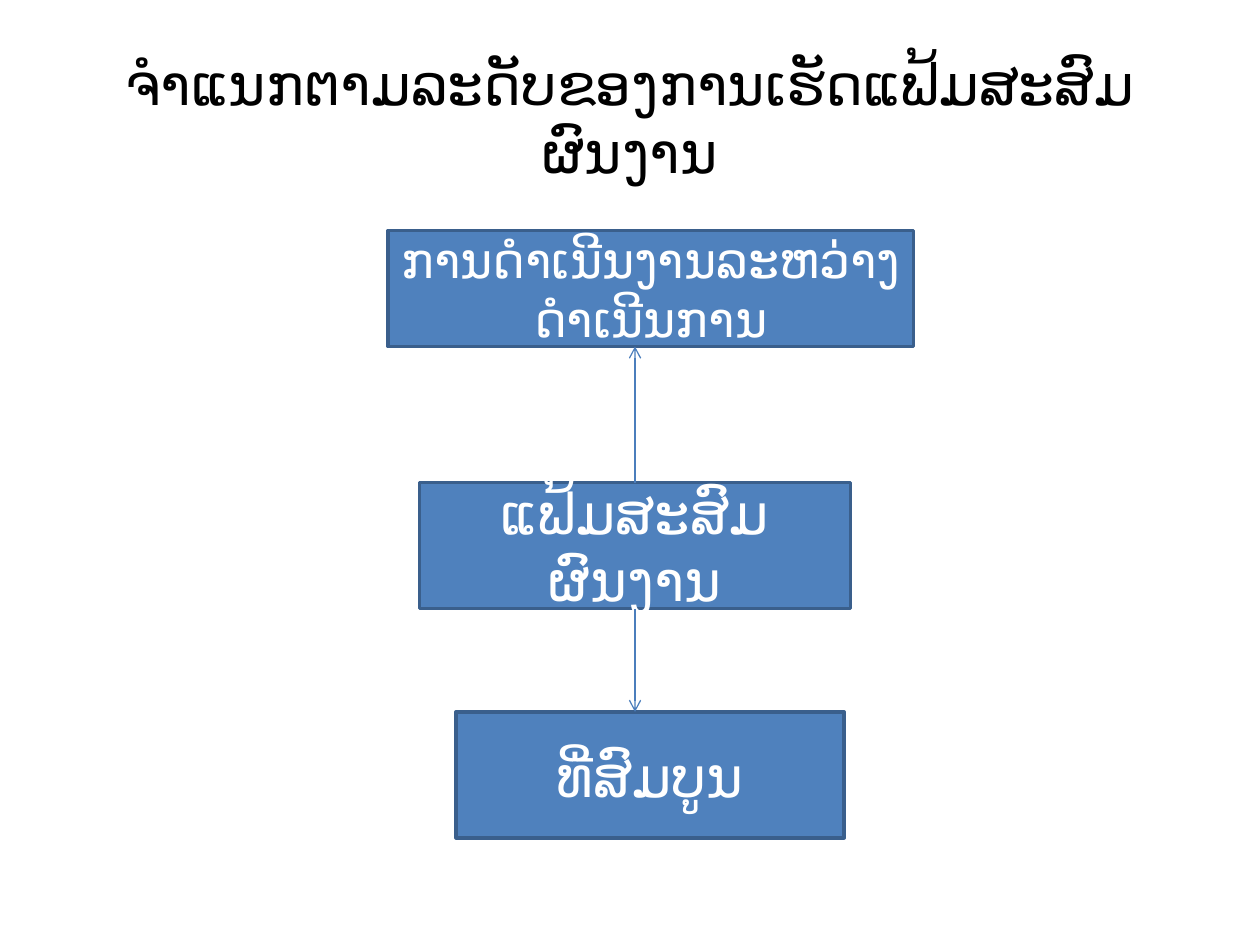
from lxml import etree
from pptx import Presentation
from pptx.dml.color import RGBColor
from pptx.enum.shapes import MSO_CONNECTOR, MSO_SHAPE
from pptx.enum.text import MSO_ANCHOR, MSO_AUTO_SIZE, PP_ALIGN
from pptx.oxml.ns import qn
from pptx.util import Inches, Pt

RECTANGLE = MSO_SHAPE.RECTANGLE
STRAIGHT = MSO_CONNECTOR.STRAIGHT
MIDDLE = MSO_ANCHOR.MIDDLE
CENTER = PP_ALIGN.CENTER
NO_AUTOFIT = MSO_AUTO_SIZE.NONE
TOP, BOTTOM = 0, 2

FONT = "Calibri"
COLORS = {
    "title": "000000",
    "box": "4F81BD",
    "border": "3A5F8C",
    "arrow": "4B7EBC",
    "label": "FFFFFF",
}

TITLE = "ຈຳແນກຕາມລະດັບຂອງການເຮັດແຟ້ມສະສົມຜົນງານ"
BOXES = {
    "portfolio": ("ແຟ້ມສະສົມຜົນງານ", 3.33, 3.83, 3.42, 1, 32),
    "in_progress": ("ການດຳເນີນງານລະຫວ່າງດຳເນີນການ", 3.08, 1.83, 4.17, 0.92, 28),
    "complete": ("ທີ່ສົມບູນ", 3.62, 5.65, 3.08, 1, 32),
}


def color(name):
    return RGBColor.from_string(COLORS[name])


def write_text(shape, text, size, color_name):
    frame = shape.text_frame
    frame.text = text
    frame.word_wrap = True
    frame.auto_size = NO_AUTOFIT
    frame.vertical_anchor = MIDDLE
    paragraph = frame.paragraphs[0]
    paragraph.alignment = CENTER
    font = paragraph.runs[0].font
    font.name = FONT
    font.size = Pt(size)
    font.color.rgb = color(color_name)


def add_box(page, text, left, top, width, height, size):
    box = page.shapes.add_shape(
        RECTANGLE, Inches(left), Inches(top), Inches(width), Inches(height)
    )
    box.shadow.inherit = False
    box.fill.solid()
    box.fill.fore_color.rgb = color("box")
    box.line.color.rgb = color("border")
    box.line.width = Pt(2)
    write_text(box, text, size, "label")
    return box


def add_arrow(page, source, side, end_y):
    center_x = source.left + source.width // 2
    start_y = source.top if side == TOP else source.top + source.height
    arrow = page.shapes.add_connector(STRAIGHT, center_x, start_y, center_x, end_y)
    arrow.begin_connect(source, side)
    arrow.line.color.rgb = color("arrow")
    arrow.line.width = Pt(0.75)
    etree.SubElement(arrow.line._get_or_add_ln(), qn("a:tailEnd"), type="arrow")
    etree.SubElement(arrow._element.spPr, qn("a:effectLst"))


def main():
    deck = Presentation()
    deck.slide_width, deck.slide_height = Inches(10), Inches(7.5)
    page = deck.slides.add_slide(deck.slide_layouts[5])

    title = page.shapes.title
    title.left, title.top = Inches(0.5), Inches(0.3)
    title.width, title.height = Inches(9), Inches(1.25)
    write_text(title, TITLE, 32.4, "title")

    boxes = {name: add_box(page, *content) for name, content in BOXES.items()}
    portfolio, upper = boxes["portfolio"], boxes["in_progress"]
    add_arrow(page, portfolio, TOP, upper.top + upper.height)
    add_arrow(page, portfolio, BOTTOM, boxes["complete"].top)

    deck.save("out.pptx")


if __name__ == "__main__":
    main()
